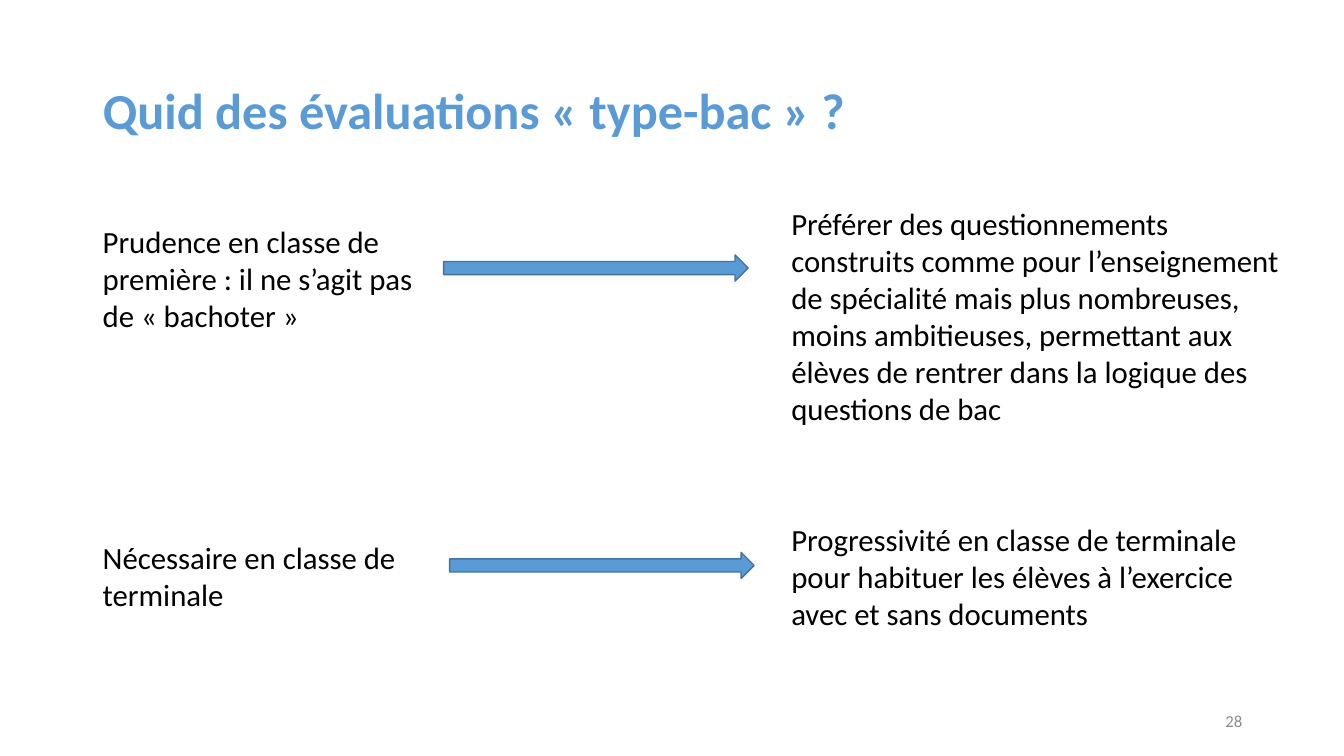
from dataclasses import dataclass

from pptx import Presentation
from pptx.dml.color import RGBColor
from pptx.enum.shapes import MSO_SHAPE
from pptx.enum.text import MSO_ANCHOR, PP_ALIGN
from pptx.util import Inches, Pt

RIGHT_ARROW = MSO_SHAPE.RIGHT_ARROW
TOP, MIDDLE = MSO_ANCHOR.TOP, MSO_ANCHOR.MIDDLE
LEFT, RIGHT = PP_ALIGN.LEFT, PP_ALIGN.RIGHT
TITLE_ONLY = 5


@dataclass(frozen=True)
class Theme:
    font: str = "Calibri"
    accent: RGBColor = RGBColor(0x5B, 0x9B, 0xD5)
    outline: RGBColor = RGBColor(0x43, 0x73, 0x9E)
    body: RGBColor = RGBColor(0, 0, 0)
    muted: RGBColor = RGBColor(0x8C, 0x8C, 0x8C)
    title_size: int = 36
    body_size: int = 22
    number_size: int = 12


THEME = Theme()

# Each row: (text, box) of the class level, arrow box, (text, box) of the advice.
ROWS = [
    (("Prudence en classe de première : il ne s’agit pas de « bachoter »",
      (0.92, 2.16, 3.54, 1.21)),
     (4.4, 2.53, 3.02, 0.26),
     ("Préférer des questionnements construits comme pour l’enseignement "
      "de spécialité mais plus nombreuses, moins ambitieuses, permettant aux "
      "élèves de rentrer dans la logique des questions de bac",
      (7.75, 1.98, 5.04, 2.32))),
    (("Nécessaire en classe de terminale", (0.92, 5.3, 3.49, 0.84)),
     (4.46, 5.48, 3.02, 0.26),
     ("Progressivité en classe de terminale pour habituer les élèves à "
      "l’exercice avec et sans documents",
      (7.75, 5.12, 4.84, 1.21))),
]


def inches(box):
    return [Inches(length) for length in box]


def fill_text(shape, text, size, color, bold=False, anchor=TOP, align=LEFT):
    frame = shape.text_frame
    frame.text = text
    frame.word_wrap = True
    frame.vertical_anchor = anchor
    para = frame.paragraphs[0]
    para.alignment = align
    font = para.runs[0].font
    font.name, font.size, font.bold = THEME.font, Pt(size), bold
    font.color.rgb = color
    return para


def place_title(page, text, box):
    title = page.shapes.title
    title.left, title.top, title.width, title.height = inches(box)
    para = fill_text(title, text, THEME.title_size, THEME.accent,
                     bold=True, anchor=MIDDLE)
    para.line_spacing = 0.9


def add_body_text(page, text, box):
    fill_text(page.shapes.add_textbox(*inches(box)), text,
              THEME.body_size, THEME.body)


def add_arrow(page, box):
    arrow = page.shapes.add_shape(RIGHT_ARROW, *inches(box))
    arrow.shadow.inherit = False
    arrow.fill.solid()
    arrow.fill.fore_color.rgb = THEME.accent
    arrow.line.color.rgb = THEME.outline
    arrow.line.width = Pt(1)


def add_page_number(page, number, box):
    fill_text(page.shapes.add_textbox(*inches(box)), number,
              THEME.number_size, THEME.muted, anchor=MIDDLE, align=RIGHT)


def add_row(page, level, arrow_box, advice):
    add_body_text(page, *level)
    add_arrow(page, arrow_box)
    add_body_text(page, *advice)


def main():
    deck = Presentation()
    deck.slide_width, deck.slide_height = Inches(13.33), Inches(7.5)
    page = deck.slides.add_slide(deck.slide_layouts[TITLE_ONLY])
    place_title(page, "Quid des évaluations « type-bac » ?",
                (0.92, 0.4, 11.5, 1.45))
    for row in ROWS:
        add_row(page, *row)
    add_page_number(page, "28", (9.42, 6.95, 3, 0.4))
    deck.save("out.pptx")


if __name__ == "__main__":
    main()
